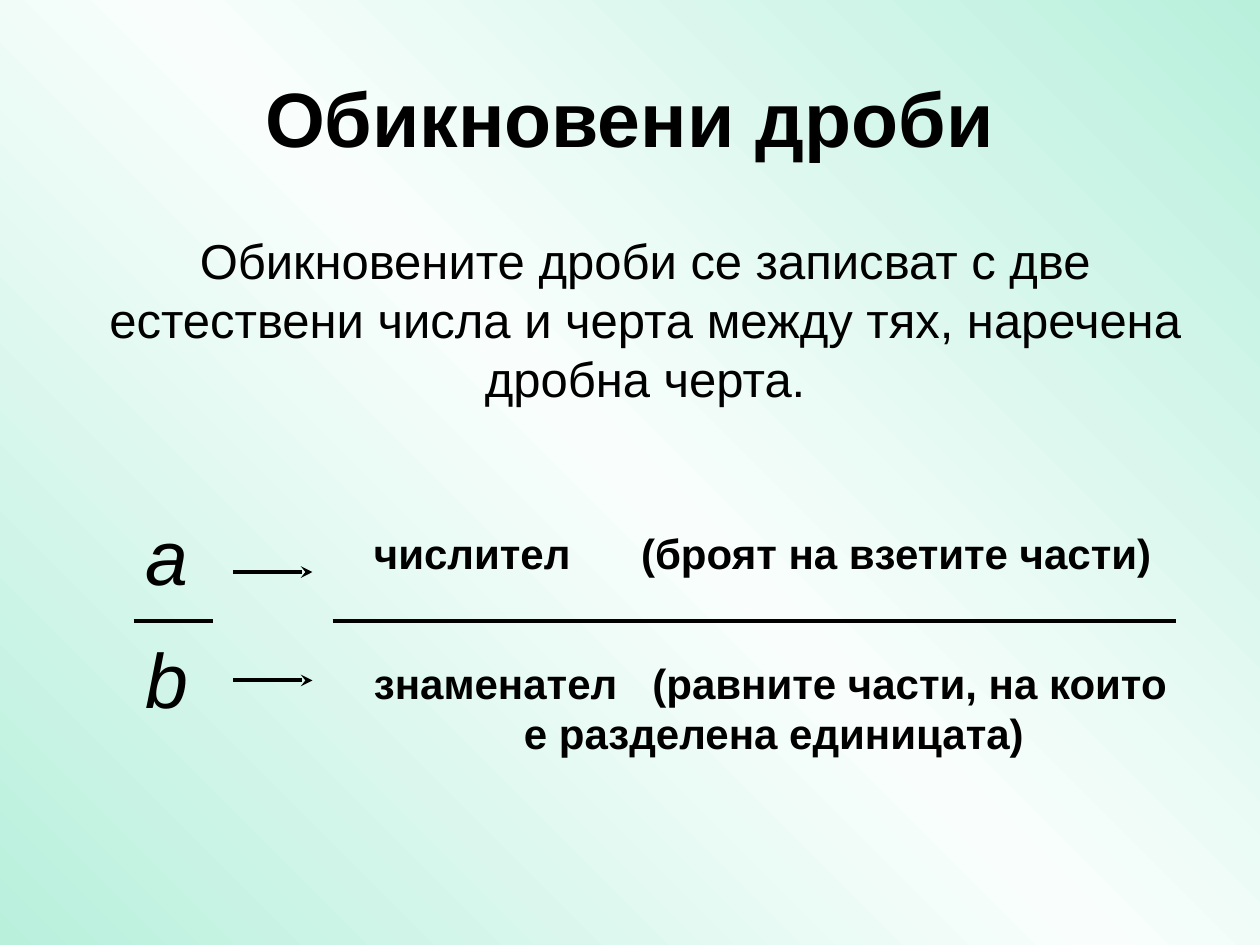
from copy import deepcopy

from lxml import etree
from pptx import Presentation
from pptx.dml.color import RGBColor
from pptx.enum.shapes import MSO_CONNECTOR
from pptx.enum.text import MSO_ANCHOR, PP_ALIGN
from pptx.oxml.ns import qn
from pptx.util import Inches, Pt

LEFT, CENTER = PP_ALIGN.LEFT, PP_ALIGN.CENTER
TOP, MIDDLE = MSO_ANCHOR.TOP, MSO_ANCHOR.MIDDLE
STRAIGHT = MSO_CONNECTOR.STRAIGHT

BLACK = RGBColor(0x00, 0x00, 0x00)
MINT = RGBColor(0xB8, 0xF0, 0xDC)
PALE = RGBColor(0xF9, 0xFE, 0xFC)
FONT = "Arial"

# Columns and rows of the fraction diagram, in inches
SYMBOL_X, ARROW_X, BAR_X, LABEL_X = 1.06, 1.85, 2.64, 2.87
SHORT_LINE = 0.63
BAR_Y = 4.93
BAR_END = 9.33


def set_background(slide):
    fill = slide.background.fill
    fill.gradient()
    fill.gradient_angle = 45
    stop_list = slide.element.find(".//" + qn("a:gsLst"))
    stop_list.append(deepcopy(stop_list[-1]))
    for stop, position, color in zip(fill.gradient_stops, (0, 0.5, 1), (MINT, PALE, MINT)):
        stop.position = position
        stop.color.rgb = color


def write(shape, text, size, bold=False, italic=False, align=LEFT,
          anchor=TOP, before=0, tabs=()):
    frame = shape.text_frame
    frame.word_wrap = True
    frame.vertical_anchor = anchor
    frame.text = text
    paragraph = frame.paragraphs[0]
    paragraph.alignment = align
    paragraph.space_before = Pt(before)
    for run in paragraph.runs:
        font = run.font
        font.name, font.size, font.bold, font.italic = FONT, Pt(size), bold, italic
        font.color.rgb = BLACK
    if tabs:
        tab_list = etree.SubElement(paragraph._p.get_or_add_pPr(), qn("a:tabLst"))
        for position in tabs:
            etree.SubElement(tab_list, qn("a:tab"), pos=str(Inches(position)), algn="l")


def add_text(slide, left, top, width, height, text, **text_format):
    box = slide.shapes.add_textbox(*map(Inches, (left, top, width, height)))
    write(box, text, **text_format)


def add_rule(slide, left, right, y, arrow=False):
    rule = slide.shapes.add_connector(STRAIGHT, *map(Inches, (left, y, right, y)))
    rule.line.color.rgb = BLACK
    rule.line.width = Pt(2.25)
    if arrow:
        etree.SubElement(rule.line._get_or_add_ln(), qn("a:tailEnd"), type="stealth")
    etree.SubElement(rule._element.spPr, qn("a:effectLst"))


def main():
    deck = Presentation()
    deck.slide_width, deck.slide_height = Inches(10), Inches(7.5)
    slide = deck.slides.add_slide(deck.slide_layouts[5])
    set_background(slide)

    # Title and definition
    title = slide.shapes.title
    title.left, title.top, title.width, title.height = map(Inches, (0.5, 0.3, 9, 1.25))
    write(title, "Обикновени дроби", size=44, bold=True, align=CENTER, anchor=MIDDLE)
    add_text(slide, 0.59, 1.78, 9.06, 1.5,
             "Обикновените дроби се записват с две естествени числа и черта "
             "между тях, наречена дробна черта.", size=28, align=CENTER)

    # Fraction symbols with their arrows
    for symbol, symbol_y, arrow_y in (("a", 3.99, 4.54), ("b", 4.96, 5.4)):
        add_text(slide, SYMBOL_X, symbol_y, 0.55, 0.83, symbol,
                 size=44, italic=True, before=5)
        add_rule(slide, ARROW_X, ARROW_X + SHORT_LINE, arrow_y, arrow=True)

    # Fraction bars
    add_rule(slide, SYMBOL_X, SYMBOL_X + SHORT_LINE, BAR_Y)
    add_rule(slide, BAR_X, BAR_END, BAR_Y)

    # Numerator and denominator explained
    add_text(slide, LABEL_X, 4.14, 6.54, 0.5, "числител\t(броят на взетите части)",
             size=24, bold=True, before=3, tabs=(2.12,))
    add_text(slide, LABEL_X, 5.17, 7.13, 1.5,
             "знаменател\t(равните части, на които\v\tе разделена единицата)",
             size=24, bold=True, before=3, tabs=(1.19, 2.21))

    deck.save("out.pptx")


if __name__ == "__main__":
    main()
